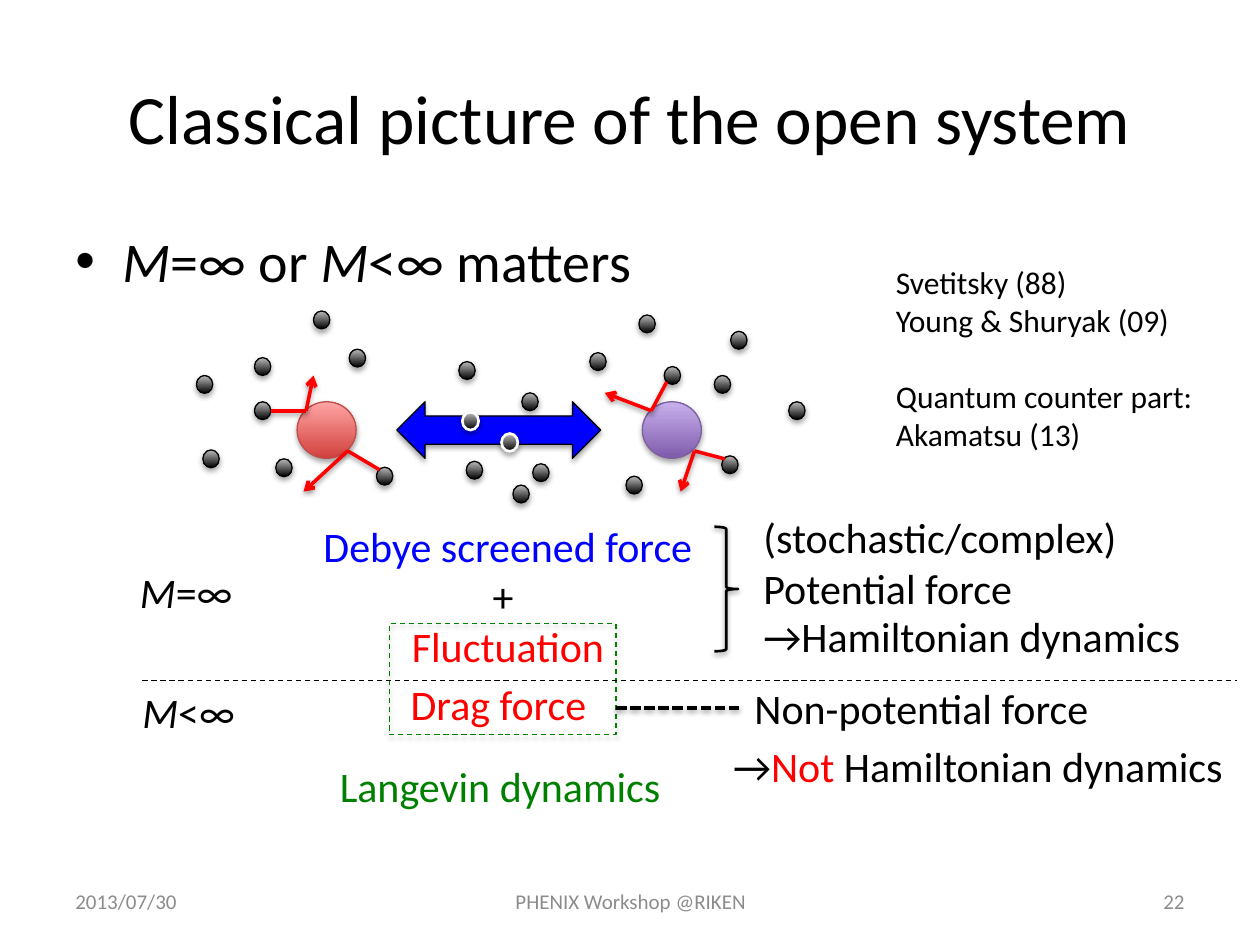
from dataclasses import dataclass
from typing import Optional

from lxml.etree import SubElement
from pptx import Presentation
from pptx.dml.color import RGBColor
from pptx.enum.dml import MSO_LINE
from pptx.enum.shapes import MSO_CONNECTOR, MSO_SHAPE
from pptx.enum.text import MSO_ANCHOR, MSO_AUTO_SIZE, PP_ALIGN
from pptx.oxml.ns import qn
from pptx.util import Cm, Pt

FONT = "Calibri"
BLACK = RGBColor(0x00, 0x00, 0x00)
WHITE = RGBColor(0xFF, 0xFF, 0xFF)
GREY = RGBColor(0x8C, 0x8C, 0x8C)
SILVER = RGBColor(0xBD, 0xBD, 0xBD)
BLUE = RGBColor(0x00, 0x00, 0xFF)
RED = RGBColor(0xFF, 0x00, 0x00)
GREEN = RGBColor(0x00, 0x80, 0x00)
QUARK_RED = (RGBColor(0xD1, 0x40, 0x3C), RGBColor(0xFF, 0xA6, 0xA5))
QUARK_PURPLE = (RGBColor(0x7F, 0x5B, 0xAB), RGBColor(0xC8, 0xB0, 0xED))
QUARK_RED_EDGE = RGBColor(0xBF, 0x4C, 0x48)
QUARK_PURPLE_EDGE = RGBColor(0x7D, 0x60, 0xA0)

LEFT, CENTER, RIGHT = PP_ALIGN.LEFT, PP_ALIGN.CENTER, PP_ALIGN.RIGHT
MIDDLE = MSO_ANCHOR.MIDDLE
DEEP_SHADOW = (35, 1.8)
SOFT_SHADOW = (38, 1.6)


@dataclass
class Span:
    text: str
    color: RGBColor = BLACK
    italic: bool = False


@dataclass
class Label:
    """Text box; lengths in cm, one list of spans per paragraph."""
    frame: tuple[float, float, float, float]
    paras: list[list[Span]]
    size: float = 24
    align: PP_ALIGN = LEFT
    anchor: MSO_ANCHOR = MSO_ANCHOR.TOP
    wrap: bool = False


@dataclass
class Outline:
    color: RGBColor = BLACK
    width: float = 0.75
    dash: Optional[MSO_LINE] = None


MASS = Span("M", italic=True)
HEADING = Label((1.27, 0.76, 22.86, 3.18),
                [[Span("Classical picture of the open system")]],
                39.6, CENTER, MIDDLE, True)
BULLET = Label((1.27, 4.45, 22.86, 12.57),
               [[MASS, Span("=∞ or "), MASS, Span("<∞ matters")]], 32, wrap=True)
NON_POTENTIAL = Label((14.96, 13.63, 7.37, 1.28), [[Span("Non-potential force")]])
REFERENCES = Label((17.81, 5.18, 6.58, 4.11),
                   [[Span(line)] for line in ("Svetitsky (88)", "Young & Shuryak (09)",
                                              "Quantum counter part:", "Akamatsu (13)")], 18)
LABELS = [
    Label((6.2, 10.36, 8.08, 3.33),
          [[Span("Debye screened force", BLUE)], [Span("+ ")], [Span("Fluctuation", RED)]],
          align=CENTER),
    Label((8.03, 13.56, 4.14, 1.27), [[Span("Drag force", RED)]]),
    Label((6.6, 15.21, 7.06, 1.27), [[Span("Langevin dynamics", GREEN)]]),
    Label((2.57, 11.3, 2.57, 1.27), [[MASS, Span("=∞")]]),
    Label((2.62, 13.72, 2.57, 1.27), [[MASS, Span("<∞")]]),
    Label((15.14, 10.19, 8.74, 2.31),
          [[Span("(stochastic/complex)")], [Span("Potential force")]], wrap=True),
    Label((15.14, 12.19, 9.07, 1.27), [[Span("→Hamiltonian dynamics")]]),
    Label((14.53, 14.81, 10.57, 1.27),
          [[Span("→"), Span("Not", RED), Span(" Hamiltonian dynamics")]]),
] + [
    Label((left, 17.65, width, 1.02), [[Span(text, GREY)]], 12, align, MIDDLE, True)
    for left, width, text, align in (
        (1.27, 5.92, "2013/07/30", LEFT),
        (8.69, 8.05, "PHENIX Workshop @RIKEN", CENTER),
        (18.21, 5.92, "22", RIGHT))
]

PARTICLE_SIZE = (0.33, 0.36)
PARTICLES = [
    (5.13, 7.21), (5.13, 8.1), (7.04, 7.04), (5.56, 9.25), (4.09, 9.07), (7.59, 9.42),
    (9.25, 7.29), (11.89, 7.11), (12.62, 9.6), (13.39, 7.39), (14.55, 9.19), (14.4, 7.57),
    (12.88, 6.35), (3.96, 7.57), (15.9, 8.1), (14.73, 6.68), (10.34, 9.78), (6.32, 6.27),
    (10.52, 7.92), (9.4, 9.3), (10.74, 9.35),
]
EXCHANGED_PARTICLES = [(9.32, 8.31), (10.11, 8.74)]
# start, point of impact and end of each scattered particle
SCATTERINGS = [
    ((13.44, 7.7), (13.13, 8.28), (12.19, 7.92)),
    ((7.65, 9.47), (7.01, 9.09), (6.12, 9.91)),
    ((5.46, 8.28), (6.17, 8.28), (6.32, 7.57)),
    ((14.61, 9.25), (14.0, 9.09), (13.72, 9.91)),
]


def set_all(target, values: dict) -> None:
    for name, value in values.items():
        setattr(target, name, value)


def place(shape, frame) -> None:
    set_all(shape, dict(zip(("left", "top", "width", "height"), map(Cm, frame))))


def write(box, label: Label) -> None:
    frame = box.text_frame
    set_all(frame, {"word_wrap": label.wrap, "auto_size": MSO_AUTO_SIZE.NONE,
                    "vertical_anchor": label.anchor})
    for index, spans in enumerate(label.paras):
        para = frame.add_paragraph() if index else frame.paragraphs[0]
        para.alignment = label.align
        for span in spans:
            run = para.add_run()
            run.text = span.text
            set_all(run.font, {"name": FONT, "size": Pt(label.size), "italic": span.italic})
            run.font.color.rgb = span.color


def add_label(page, label: Label):
    box = page.shapes.add_textbox(*map(Cm, label.frame))
    write(box, label)
    return box


def add_bullet(para, indent: float) -> None:
    properties = para._p.get_or_add_pPr()
    properties.set("marL", str(Cm(indent)))
    properties.set("indent", str(-Cm(indent)))
    SubElement(properties, qn("a:buFont"), typeface="Arial")
    SubElement(properties, qn("a:buChar"), char="•")


def finish(shape, outline: Outline, shadow: tuple[int, float]) -> None:
    """Set the line, then the shadow given as opacity in percent and distance in points."""
    shape.line.color.rgb = outline.color
    set_all(shape.line, {"width": Pt(outline.width), "dash_style": outline.dash})
    opacity, distance = shadow
    effects = SubElement(shape.element.spPr, qn("a:effectLst"))
    outer = SubElement(effects, qn("a:outerShdw"), blurRad=str(Pt(3.1)),
                       dist=str(Pt(distance)), dir="5400000", rotWithShape="0")
    color = SubElement(outer, qn("a:srgbClr"), val=str(BLACK))
    SubElement(color, qn("a:alpha"), val=str(opacity * 1000))


def add_figure(page, kind: MSO_SHAPE, frame, outline: Outline, colors=(), shadow=DEEP_SHADOW):
    """Draw a preset: no colour leaves it empty, two run from bottom to top."""
    shape = page.shapes.add_shape(kind, *map(Cm, frame))
    fill = shape.fill
    if not colors:
        fill.background()
    elif len(colors) == 1:
        fill.solid()
        fill.fore_color.rgb = colors[0]
    else:
        fill.gradient()
        fill.gradient_angle = 90
        for stop, color in zip(fill.gradient_stops, colors):
            stop.color.rgb = color
    finish(shape, outline, shadow)


def add_line(page, start, end, outline: Outline, arrow: bool = False):
    line = page.shapes.add_connector(MSO_CONNECTOR.STRAIGHT, *map(Cm, (*start, *end)))
    finish(line, outline, SOFT_SHADOW)
    if arrow:
        SubElement(line.line._get_or_add_ln(), qn("a:tailEnd"), type="arrow")
    return line


def main() -> None:
    deck = Presentation()
    set_all(deck, {"slide_width": Cm(25.4), "slide_height": Cm(19.05)})
    page = deck.slides.add_slide(deck.slide_layouts[5])
    place(page.shapes.title, HEADING.frame)
    write(page.shapes.title, HEADING)
    add_bullet(add_label(page, BULLET).text_frame.paragraphs[0], 0.95)
    for label in LABELS:
        add_label(page, label)
    references = add_label(page, REFERENCES)
    references.text_frame.paragraphs[2].space_before = Pt(22)

    add_figure(page, MSO_SHAPE.RIGHT_BRACE, (14.4, 10.62, 0.48, 2.51), Outline(width=1.5),
               shadow=SOFT_SHADOW)
    add_figure(page, MSO_SHAPE.RECTANGLE, (7.85, 12.57, 4.57, 2.24),
               Outline(GREEN, dash=MSO_LINE.DASH))
    non_potential = add_label(page, NON_POTENTIAL)
    drag_link = add_line(page, (12.42, 14.27), (14.96, 14.27),
                         Outline(width=2, dash=MSO_LINE.SQUARE_DOT))
    drag_link.end_connect(non_potential, 1)
    add_line(page, (2.87, 13.72), (24.94, 13.72), Outline(dash=MSO_LINE.DASH))

    for left, colors, edge in ((5.99, QUARK_RED, QUARK_RED_EDGE),
                               (12.95, QUARK_PURPLE, QUARK_PURPLE_EDGE)):
        add_figure(page, MSO_SHAPE.OVAL, (left, 8.1, 1.19, 1.14), Outline(edge), colors)
    add_figure(page, MSO_SHAPE.LEFT_RIGHT_ARROW, (8, 8.1, 4.11, 1.14), Outline(), (BLUE,))
    for spots, outline in ((PARTICLES, Outline()), (EXCHANGED_PARTICLES, Outline(WHITE, 1.5))):
        for spot in spots:
            add_figure(page, MSO_SHAPE.OVAL, (*spot, *PARTICLE_SIZE), outline, (BLACK, SILVER))
    for start, impact, end in SCATTERINGS:
        add_line(page, start, impact, Outline(RED, 2))
        add_line(page, impact, end, Outline(RED, 2), arrow=True)
    deck.save("out.pptx")


if __name__ == "__main__":
    main()
